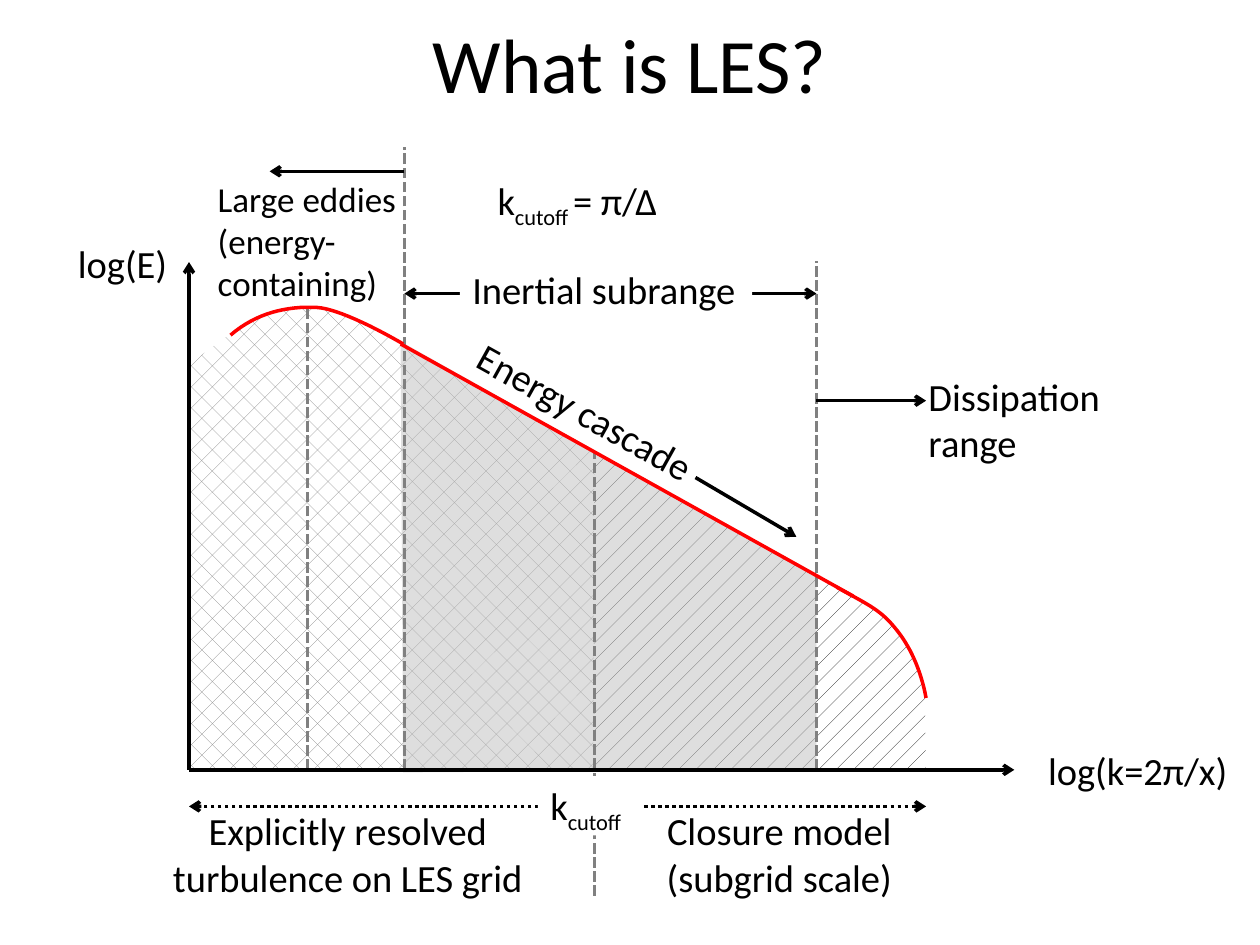
import dataclasses
import typing

import lxml.etree
import pptx
import pptx.dml.color
import pptx.enum.dml
import pptx.enum.shapes
import pptx.enum.text
import pptx.oxml.ns
import pptx.util

Inches = pptx.util.Inches
Pattern = pptx.enum.dml.MSO_PATTERN
Dash = pptx.enum.dml.MSO_LINE
Align = pptx.enum.text.PP_ALIGN
Anchor = pptx.enum.text.MSO_ANCHOR
Fit = pptx.enum.text.MSO_AUTO_SIZE
Point = tuple[float, float]

BLACK, GRAY, RED, WHITE, SILVER = "000000", "808080", "FF0000", "FFFFFF", "BFBFBF"
BASE, CUT, LEFT, RIGHT, START, END = 6.11, 4.72, 3.21, 6.48, 1.5, 7.35


@dataclasses.dataclass
class Line:
    start: Point
    end: Point
    color: str = BLACK
    dash: typing.Any = None
    head: bool = False
    tail: bool = True


@dataclasses.dataclass
class Zone:
    points: list[Point]
    color: str
    pattern: typing.Any = None


@dataclasses.dataclass
class Label:
    box: tuple[float, float, float, float]
    words: tuple[str, ...]
    size: int = 22
    center: bool = False
    filled: bool = False
    wrap: bool = False
    turn: float = 0


ZONES = [
    Zone([(4.71, 6.11), (4.72, 3.58), (2.7, 2.47), (2.52, 2.44), (2.38, 2.43),
          (2.25, 2.44), (2.14, 2.47), (1.96, 2.55), (1.84, 2.64), (1.49, 2.9),
          (1.5, 6.12)], GRAY, Pattern.DIAGONAL_BRICK),
    Zone([(4.71, 6.11), (4.72, 3.58), (6.97, 4.85), (7.06, 4.93), (7.13, 5.02),
          (7.22, 5.14), (7.28, 5.29), (7.34, 5.49), (7.35, 6.12)],
         BLACK, Pattern.PERCENT_5),
    Zone([(3.2, 6.13), (3.18, 2.71), (6.48, 4.57), (6.48, 6.11)], SILVER),
]

GUIDES = [(2.44, BASE, 2.43), (LEFT, BASE, 1.17), (CUT, 7.11, 3.58), (RIGHT, BASE, 2.07)]
LINES = [Line((x, low), (x, top), GRAY, Dash.SQUARE_DOT, tail=False)
         for x, low, top in GUIDES]
LINES += [Line((CUT, 6.4), (x, 6.4), dash=Dash.ROUND_DOT) for x in (START, END)]
LINES += [
    Line((LEFT, 2.33), (RIGHT, 2.33), head=True),
    Line((START, BASE), (START, 2.08)),
    Line((START, BASE), (8.05, BASE)),
    Line((3.18, 2.73), (6.77, 4.73), RED, tail=False),
    Line((RIGHT, 3.18), (END, 3.18)),
    Line((5.52, 3.79), (6.32, 4.26)),
    Line((LEFT, 1.36), (2.14, 1.36)),
]

CURVES = [
    [(1.83, 2.66), (2.04, 2.48), (2.28, 2.43), (2.51, 2.44),
     (2.73, 2.45), (3.2, 2.73), (3.2, 2.73)],
    [(6.64, 4.66), (6.85, 4.78), (6.98, 4.83), (7.1, 4.98),
     (7.22, 5.12), (7.31, 5.32), (7.35, 5.54)],
]

LABELS = [
    Label((0, 0, 10, 0.99), ("What is LES?",), size=44, center=True, wrap=True),
    Label((0.52, 1.86, 0.92, 0.47), ("log(E)",)),
    Label((8.22, 5.88, 1.64, 0.47), ("log(k=2π/x)",)),
    Label((3.65, 2.06, 2.32, 0.47), ("Inertial subrange",), filled=True),
    Label((5.18, 6.36, 2.01, 0.84), ("Closure model\n(subgrid scale)",), center=True),
    Label((4.27, 6.16, 0.83, 0.47), ("k", "cutoff"), filled=True),
    Label((7.27, 2.91, 1.58, 0.84), ("Dissipation\nrange",)),
    Label((1.25, 6.36, 3.02, 0.84), ("Explicitly resolved\nturbulence on LES grid",),
          center=True, wrap=True),
    Label((3.6, 3.04, 2.12, 0.47), ("Energy cascade",), turn=29.1),
    Label((1.63, 1.36, 1.63, 1.11), ("Large eddies\n(energy-\ncontaining)",), size=20),
    Label((3.85, 1.36, 1.58, 0.47), ("k", "cutoff ", "= π/Δ"), filled=True),
]


def paint(color: typing.Any, value: str) -> None:
    color.rgb = pptx.dml.color.RGBColor.from_string(value)


def add_tag(parent: typing.Any, name: str, **attrs: str) -> None:
    lxml.etree.SubElement(parent, pptx.oxml.ns.qn(name), attrs)


def stroke(line: typing.Any, color: str) -> None:
    line.width = pptx.util.Pt(2)
    line.fill.solid()
    paint(line.fill.fore_color, color)


def draw_line(shapes: typing.Any, item: Line) -> None:
    ends = [Inches(v) for v in item.start + item.end]
    shape = shapes.add_connector(pptx.enum.shapes.MSO_CONNECTOR.STRAIGHT, *ends)
    stroke(shape.line, item.color)
    if item.dash:
        shape.line.dash_style = item.dash
    edge = shape._element.spPr.find(pptx.oxml.ns.qn("a:ln"))
    if item.head:
        add_tag(edge, "a:headEnd", type="arrow")
    if item.tail:
        add_tag(edge, "a:tailEnd", type="arrow")
    add_tag(shape._element.spPr, "a:effectLst")


def draw_shape(shapes: typing.Any, points: list[Point], close: bool) -> typing.Any:
    spots = [(Inches(x), Inches(y)) for x, y in points]
    pen = shapes.build_freeform(*spots[0])
    pen.add_line_segments(spots[1:], close=close)
    shape = pen.convert_to_shape()
    shape.shadow.inherit = False
    return shape


def draw_zone(shapes: typing.Any, item: Zone) -> None:
    shape = draw_shape(shapes, item.points, True)
    shape.line.fill.background()
    if item.pattern:
        shape.fill.patterned()
        shape.fill.pattern = item.pattern
        paint(shape.fill.back_color, WHITE)
        paint(shape.fill.fore_color, item.color)
    else:
        shape.fill.solid()
        paint(shape.fill.fore_color, item.color)
        tone = shape._element.spPr.find(".//" + pptx.oxml.ns.qn("a:srgbClr"))
        add_tag(tone, "a:alpha", val="50000")


def bend(knots: list[Point], steps: int = 16) -> list[Point]:
    points = [knots[0]]
    for i in range(0, len(knots) - 1, 3):
        for n in range(1, steps + 1):
            t = n / steps
            u = 1 - t
            shares = (u ** 3, 3 * u * u * t, 3 * u * t * t, t ** 3)
            x, y = (sum(w * k[a] for w, k in zip(shares, knots[i:i + 4])) for a in (0, 1))
            points.append((x, y))
    return points


def draw_curve(shapes: typing.Any, knots: list[Point]) -> None:
    shape = draw_shape(shapes, bend(knots), False)
    shape.fill.background()
    stroke(shape.line, RED)


def draw_label(shapes: typing.Any, item: Label) -> None:
    box = [Inches(v) for v in item.box]
    if item.filled:
        shape = shapes.add_shape(pptx.enum.shapes.MSO_SHAPE.RECTANGLE, *box)
        shape.shadow.inherit = False
        shape.fill.solid()
        paint(shape.fill.fore_color, WHITE)
        shape.line.fill.background()
    else:
        shape = shapes.add_textbox(*box)
    shape.rotation = item.turn
    frame = shape.text_frame
    frame.word_wrap = item.wrap
    title = item.size == 44
    frame.auto_size = Fit.NONE if title else Fit.SHAPE_TO_FIT_TEXT
    frame.vertical_anchor = Anchor.MIDDLE if title else Anchor.TOP
    para = frame.paragraphs[0]
    para.text = item.words[0]
    para.alignment = Align.CENTER if item.center else Align.LEFT
    for word in item.words[1:]:
        para.add_run().text = word
    for run in para.runs:
        run.font.name = "Calibri"
        run.font.size = pptx.util.Pt(item.size)
        paint(run.font.color, BLACK)
    if len(item.words) > 1:
        para.runs[1].font._element.set("baseline", "-25000")


def main() -> None:
    deck = pptx.Presentation()
    deck.slide_width, deck.slide_height = Inches(10), Inches(7.5)
    shapes = deck.slides.add_slide(deck.slide_layouts[6]).shapes
    for draw, items in ((draw_zone, ZONES), (draw_line, LINES),
                        (draw_curve, CURVES), (draw_label, LABELS)):
        for item in items:
            draw(shapes, item)
    deck.save("out.pptx")


if __name__ == "__main__":
    main()
